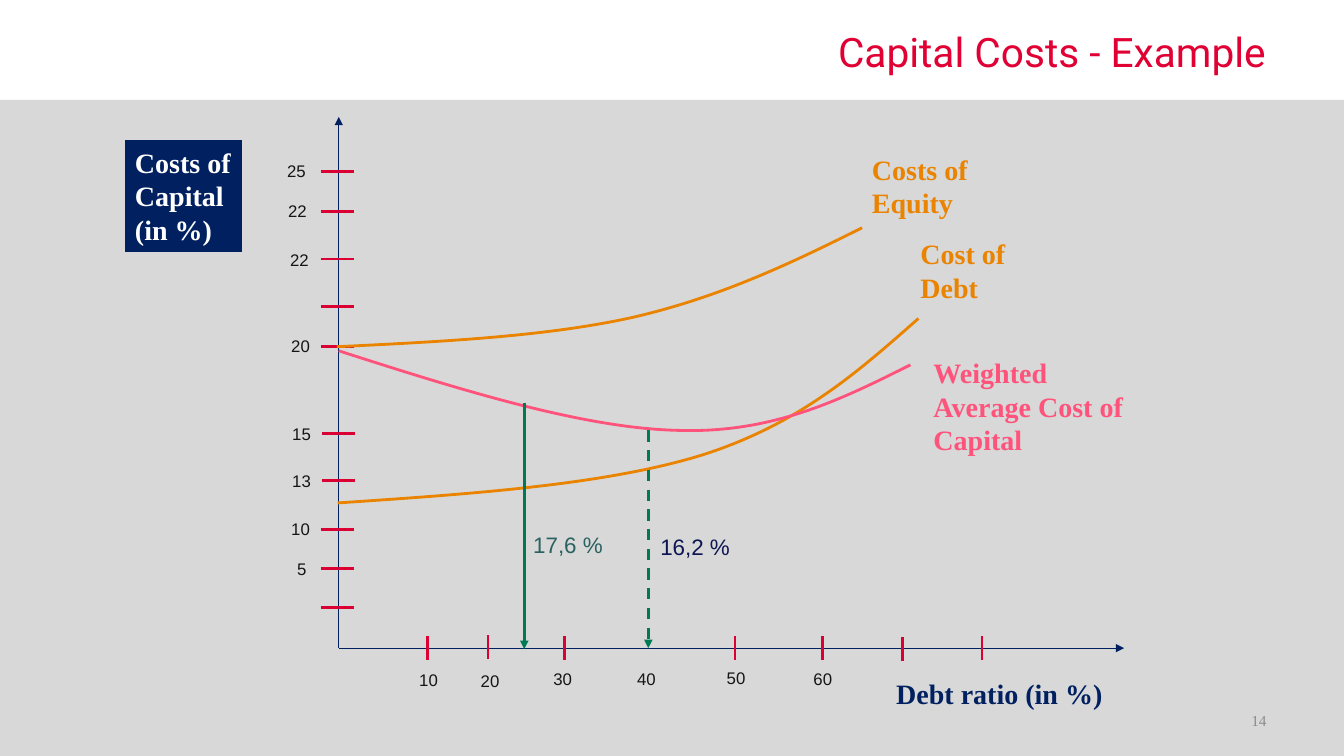
from dataclasses import dataclass

import pptx
import pptx.dml.color
import pptx.enum.dml
import pptx.enum.shapes
import pptx.enum.text
import pptx.oxml
import pptx.oxml.ns
import pptx.shapes.autoshape
import pptx.slide
import pptx.util

RGB = pptx.dml.color.RGBColor
ALIGN = pptx.enum.text.PP_ALIGN
ANCHOR = pptx.enum.text.MSO_ANCHOR

EMU_PER_PX = 9144

WHITE = RGB(0xFF, 0xFF, 0xFF)
PANEL_GREY = RGB(0xD8, 0xD8, 0xD8)
NUMBER_GREY = RGB(0x8C, 0x8C, 0x8C)
NAVY = RGB(0x00, 0x20, 0x60)
TITLE_RED = RGB(0xE0, 0x00, 0x34)
TICK_RED = RGB(0xDB, 0x00, 0x33)
NEAR_BLACK = RGB(0x15, 0x15, 0x15)
ORANGE = RGB(0xE9, 0x83, 0x00)
PINK = RGB(0xFF, 0x53, 0x7B)
GREEN = RGB(0x00, 0x7A, 0x55)
TEAL = RGB(0x29, 0x62, 0x60)
INDIGO = RGB(0x0D, 0x15, 0x53)

SERIF = "Times New Roman"
SANS = "Arial"

Point = tuple[int, int]
Box = tuple[int, int, int, int]


@dataclass(frozen=True)
class Tick:
    at: int
    label: str = ""
    label_left: int = 0
    shift: int = 0
    label_shift: int = 0
    marked: bool = True


@dataclass(frozen=True)
class Curve:
    color: RGB
    points: tuple[Point, ...]


@dataclass(frozen=True)
class Caption:
    text: str
    box: Box
    color: RGB
    wrap: bool = False


@dataclass(frozen=True)
class Reading:
    text: str
    text_box: Box
    text_color: RGB
    x: int
    top: int
    bottom: int
    dashed: bool


COST_TICKS = (
    Tick(170, "25", 275),
    Tick(210, "22", 276, label_shift=-1),
    Tick(257, "22", 278, label_shift=1),
    Tick(304),
    Tick(344, "20", 279, label_shift=-1),
    Tick(430, "15", 280, shift=1),
    Tick(477, "13", 280, shift=1),
    Tick(525, "10", 279),
    Tick(564, "5", 285),
    Tick(603),
)
DEBT_TICKS = (
    Tick(424, "10", 406, label_shift=1),
    Tick(484, "20", 467, shift=-1, label_shift=2),
    Tick(560, "30", 539),
    Tick(643, "40", 622, marked=False),
    Tick(729, "50", 711, label_shift=-1),
    Tick(816, "60", 797),
    Tick(895, shift=1),
    Tick(974),
)
CURVES = (
    Curve(ORANGE, ((334, 344), (437, 339), (541, 334), (627, 315),
                   (714, 295), (785, 261), (855, 226))),
    Curve(ORANGE, ((335, 499), (469, 490), (602, 481), (698, 451),
                   (794, 420), (852, 368), (911, 316))),
    Curve(PINK, ((336, 348), (457, 387), (579, 425), (673, 427),
                 (767, 430), (835, 396), (903, 362))),
)
CAPTIONS = (
    Caption("Debt ratio (in %)", (879, 666, 226, 44), NAVY),
    Caption("Costs of\nEquity", (855, 146, 116, 77), ORANGE),
    Caption("Cost of\nDebt", (903, 230, 224, 77), ORANGE, wrap=True),
    Caption("Weighted\nAverage Cost of\nCapital", (916, 348, 212, 111), PINK),
)
READINGS = (
    Reading("17,6 %", (519, 522, 104, 37), TEAL, 520, 400, 644, False),
    Reading("16,2 %", (645, 524, 102, 37), INDIGO, 643, 427, 643, True),
)


def px(length: int) -> pptx.util.Emu:
    return pptx.util.Emu(length * EMU_PER_PX)


def add_panel(slide: pptx.slide.Slide, box: Box,
              color: RGB) -> pptx.shapes.autoshape.Shape:
    panel = slide.shapes.add_shape(
        pptx.enum.shapes.MSO_SHAPE.RECTANGLE, *map(px, box))
    panel.shadow.inherit = False
    panel.fill.solid()
    panel.fill.fore_color.rgb = color
    panel.line.fill.background()
    return panel


def add_text(slide: pptx.slide.Slide, text: str, box: Box, *, size: float,
             color: RGB, face: str = SANS, bold: bool = False,
             wrap: bool = True, align: ALIGN = ALIGN.LEFT,
             anchor: ANCHOR = ANCHOR.TOP, fill: RGB | None = None) -> None:
    if fill is None:
        holder = slide.shapes.add_textbox(*map(px, box))
    else:
        holder = add_panel(slide, box, fill)
    frame = holder.text_frame
    frame.word_wrap = wrap
    frame.vertical_anchor = anchor
    frame.text = text
    for paragraph in frame.paragraphs:
        paragraph.alignment = align
        paragraph.font.name = face
        paragraph.font.size = pptx.util.Pt(size)
        paragraph.font.bold = bold
        paragraph.font.color.rgb = color


def add_line(slide: pptx.slide.Slide, start: Point, end: Point, color: RGB,
             width: float = 2, arrow: bool = False, dashed: bool = False) -> None:
    line = slide.shapes.add_connector(
        pptx.enum.shapes.MSO_CONNECTOR.STRAIGHT, *map(px, start + end))
    line.line.color.rgb = color
    line.line.width = pptx.util.Pt(width)
    if dashed:
        line.line.dash_style = pptx.enum.dml.MSO_LINE.DASH
    if arrow:
        head = pptx.oxml.parse_xml(
            f'<a:tailEnd {pptx.oxml.ns.nsdecls("a")} type="triangle"/>')
        line.line._get_or_add_ln().append(head)
    line._element.spPr.append(pptx.oxml.parse_xml(
        f'<a:effectLst {pptx.oxml.ns.nsdecls("a")}/>'))


def add_curve(slide: pptx.slide.Slide, curve: Curve) -> None:
    start, *rest = [(px(x), px(y)) for x, y in curve.points]
    builder = slide.shapes.build_freeform(*start)
    builder.add_line_segments(rest, close=False)
    shape = builder.convert_to_shape()
    segments = shape._element.xpath(".//a:lnTo")
    for first in range(0, len(segments), 3):
        bend = pptx.oxml.parse_xml(
            f'<a:cubicBezTo {pptx.oxml.ns.nsdecls("a")}/>')
        segments[first].addprevious(bend)
        for segment in segments[first:first + 3]:
            bend.append(segment[0])
            segment.getparent().remove(segment)
    shape.shadow.inherit = False
    shape.fill.background()
    shape.line.color.rgb = curve.color
    shape.line.width = pptx.util.Pt(2)


def main() -> None:
    deck = pptx.Presentation()
    deck.slide_width, deck.slide_height = px(1333), px(750)
    slide = deck.slides.add_slide(deck.slide_layouts[6])

    add_panel(slide, (0, 99, 1333, 651), PANEL_GREY)
    add_text(slide, "Capital Costs - Example", (340, 18, 926, 66), size=29,
             color=TITLE_RED, face="Roboto", align=ALIGN.RIGHT,
             anchor=ANCHOR.MIDDLE)
    add_text(slide, "14", (955, 695, 311, 40), size=10.9, color=NUMBER_GREY,
             face=SERIF, align=ALIGN.RIGHT, anchor=ANCHOR.MIDDLE)
    add_text(slide, "Costs of\nCapital\n(in %)", (124, 139, 116, 111), size=20,
             color=WHITE, face=SERIF, bold=True, wrap=False, fill=NAVY)

    origin = (336, 643)
    for axis_end in ((336, 116), (1115, 643)):
        add_line(slide, origin, axis_end, NAVY, width=0.75, arrow=True)

    for tick in COST_TICKS:
        left = 318 + tick.shift
        add_line(slide, (left, tick.at), (left + 33, tick.at), TICK_RED)
        if tick.label:
            label_top = tick.at - 15 + tick.label_shift
            add_text(slide, tick.label, (tick.label_left, label_top, 43, 30),
                     size=12, color=NEAR_BLACK)
    for tick in DEBT_TICKS:
        top = 631 + tick.shift
        if tick.marked:
            add_line(slide, (tick.at, top), (tick.at, top + 24), TICK_RED)
        if tick.label:
            label_top = 659 + tick.label_shift
            add_text(slide, tick.label, (tick.label_left, label_top, 43, 30),
                     size=12, color=NEAR_BLACK)

    for curve in CURVES:
        add_curve(slide, curve)
    for caption in CAPTIONS:
        add_text(slide, caption.text, caption.box, size=20, color=caption.color,
                 face=SERIF, bold=True, wrap=caption.wrap)
    for reading in READINGS:
        add_line(slide, (reading.x, reading.top), (reading.x, reading.bottom),
                 GREEN, arrow=True, dashed=reading.dashed)
        add_text(slide, reading.text, reading.text_box, size=16,
                 color=reading.text_color)

    deck.save("out.pptx")


if __name__ == "__main__":
    main()
